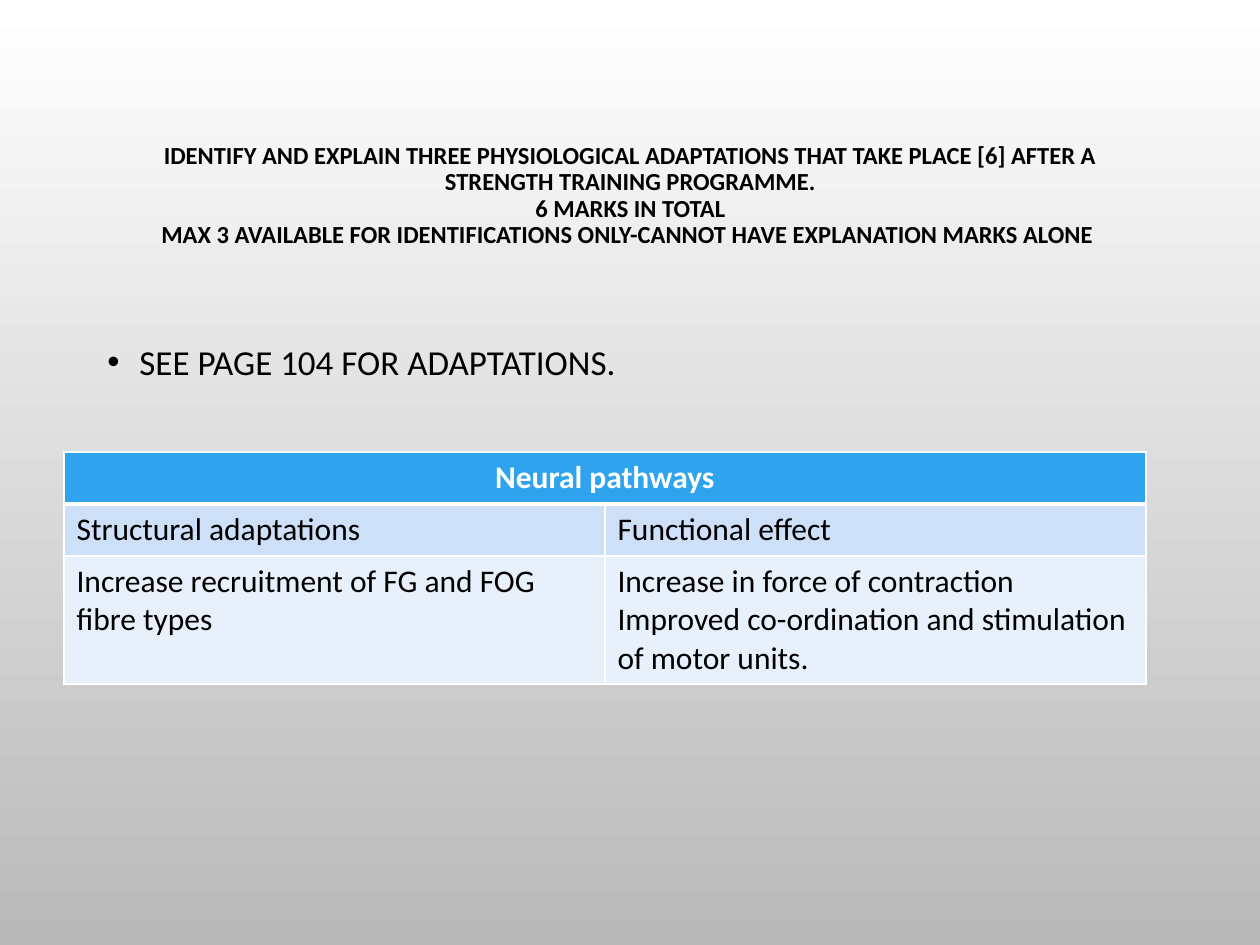
import pptx
import pptx.dml.color
import pptx.enum.text
import pptx.oxml
import pptx.oxml.ns
import pptx.util


def px(length):
    return pptx.util.Emu(round(length * 914400 / 126))


def rgb(value):
    return pptx.dml.color.RGBColor.from_string(value)


presentation = pptx.Presentation()
presentation.slide_width = px(1260)
presentation.slide_height = px(945)
slide = presentation.slides.add_slide(presentation.slide_layouts[6])

background = slide.background.fill
background.gradient()
background.gradient_angle = 270
for stop, color in zip(background.gradient_stops, ["FFFFFF", "B9B9B9"]):
    stop.color.rgb = rgb(color)

title = slide.shapes.add_textbox(px(95), px(86), px(1071), px(220))
title.text_frame.word_wrap = True
title.text_frame.vertical_anchor = pptx.enum.text.MSO_ANCHOR.MIDDLE
title.text_frame.text = (
    "IDENTIFY AND EXPLAIN THREE PHYSIOLOGICAL ADAPTATIONS THAT TAKE PLACE [6] "
    "AFTER A STRENGTH TRAINING PROGRAMME.\v6 MARKS IN TOTAL\v"
    "MAX 3 AVAILABLE FOR IDENTIFICATIONS ONLY-CANNOT HAVE EXPLANATION MARKS ALONE "
)
paragraph = title.text_frame.paragraphs[0]
paragraph.alignment = pptx.enum.text.PP_ALIGN.CENTER
paragraph.line_spacing = 0.9
for run in paragraph.runs:
    run.font.name = "Calibri"
    run.font.size = pptx.util.Pt(14)
    run.font.bold = True
    run.font.color.rgb = rgb("000000")

body = slide.shapes.add_textbox(px(95), px(326), px(1071), px(471))
body.text_frame.word_wrap = True
body.text_frame.text = "SEE PAGE 104 FOR ADAPTATIONS."
paragraph = body.text_frame.paragraphs[0]
paragraph.line_spacing = 1.2
properties = paragraph._p.get_or_add_pPr()
properties.set("marL", str(px(32)))
properties.set("indent", str(px(-32)))
namespace = pptx.oxml.ns.nsdecls("a")
for bullet in ['buFont %s typeface="Arial"', 'buChar %s char="•"']:
    properties.append(pptx.oxml.parse_xml(f"<a:{bullet % namespace}/>"))
run = paragraph.runs[0]
run.font.name = "Calibri"
run.font.size = pptx.util.Pt(20)
run.font.color.rgb = rgb("000000")

rows = [
    (52, "2FA3EE", "FFFFFF", ["Neural pathways", ""]),
    (52, "CDE0F8", "000000", ["Structural adaptations", "Functional effect"]),
    (128, "E8F0FC", "000000", [
        "Increase recruitment of FG and FOG fibre types",
        "Increase in force of contraction\n"
        "Improved co-ordination and stimulation of motor units.",
    ]),
]
table = slide.shapes.add_table(3, 2, px(64), px(452), px(1082), px(232)).table
for column in table.columns:
    column.width = px(541)
table.cell(0, 0).merge(table.cell(0, 1))

for row_index, (height, fill, color, texts) in enumerate(rows):
    table.rows[row_index].height = px(height)
    for column_index, text in enumerate(texts):
        cell = table.cell(row_index, column_index)
        cell.fill.solid()
        cell.fill.fore_color.rgb = rgb(fill)
        cell.text_frame.text = text
        for paragraph in cell.text_frame.paragraphs:
            if row_index == 0:
                paragraph.alignment = pptx.enum.text.PP_ALIGN.CENTER
            for run in paragraph.runs:
                run.font.name = "Calibri"
                run.font.size = pptx.util.Pt(18)
                run.font.bold = row_index == 0
                run.font.color.rgb = rgb(color)
        for position, side in enumerate("LRTB"):
            heavy = (row_index, side) in [(0, "B"), (1, "T")]
            width = pptx.util.Pt(3 if heavy else 1)
            border = pptx.oxml.parse_xml(
                f'<a:ln{side} {namespace} w="{width}"><a:solidFill>'
                f'<a:srgbClr val="FFFFFF"/></a:solidFill></a:ln{side}>'
            )
            cell._tc.get_or_add_tcPr().insert(position, border)

presentation.save("out.pptx")
